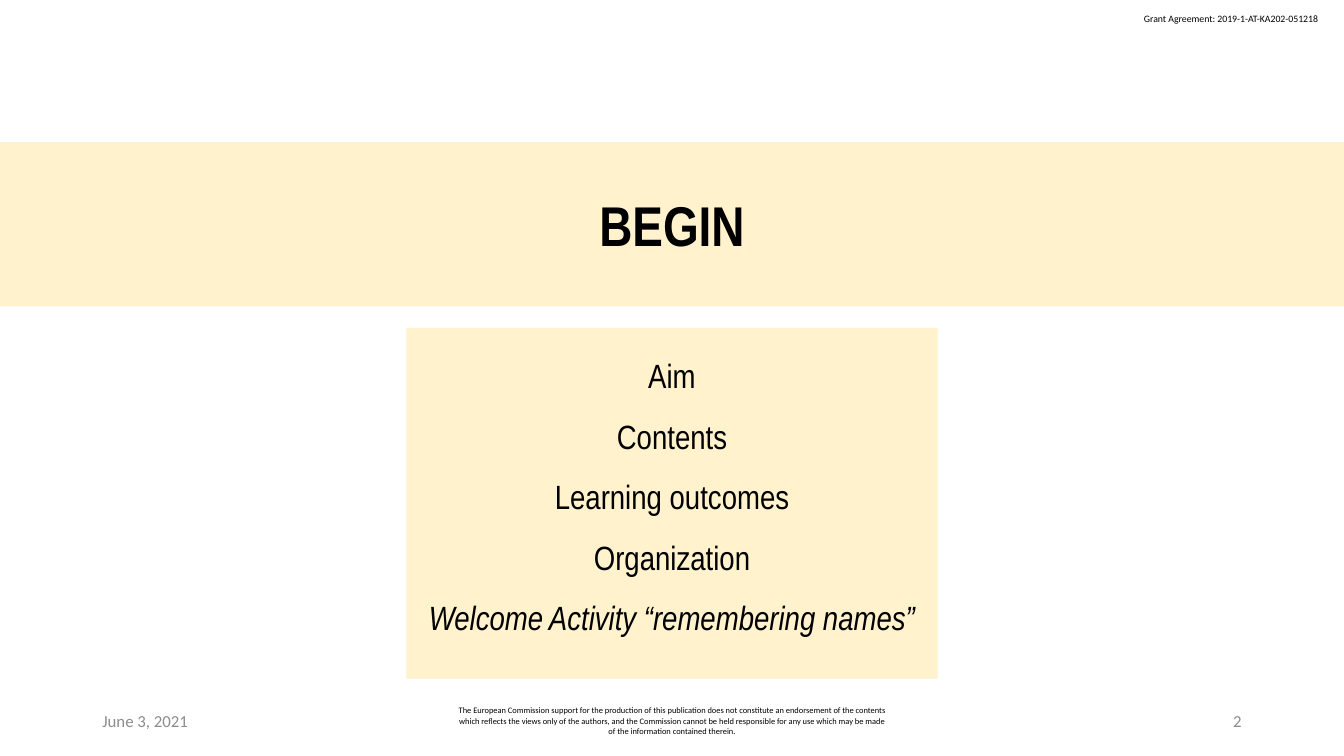
from pptx import Presentation
from pptx.dml.color import RGBColor
from pptx.enum.shapes import MSO_SHAPE
from pptx.enum.text import MSO_ANCHOR, PP_ALIGN
from pptx.util import Cm, Pt

CREAM = RGBColor(0xFF, 0xF2, 0xCC)
BLACK = RGBColor(0x00, 0x00, 0x00)
GREY = RGBColor(0x8C, 0x8C, 0x8C)

PAGE_WIDTH = Cm(33.87)
PAGE_HEIGHT = Cm(19.05)
HEADING_FONT = "Arial Narrow"
SMALL_FONT = "Calibri"

TOPICS = [
    "Aim",
    "Contents",
    "Learning outcomes",
    "Organization",
    "Welcome Activity “remembering names”",
]
DISCLAIMER = (
    "The European Commission support for the production of this publication "
    "does not constitute an endorsement of the contents which reflects the "
    "views only of the authors, and the Commission cannot be held responsible "
    "for any use which may be made of the information contained therein."
)


def style(para, font_name, size, color, align):
    para.alignment = align
    para.font.name = font_name
    para.font.size = Pt(size)
    para.font.color.rgb = color


def add_label(page, left, top, width, height, text, size, color, align, wrap=True):
    box = page.shapes.add_textbox(left, top, width, height)
    frame = box.text_frame
    frame.word_wrap = wrap
    frame.vertical_anchor = MSO_ANCHOR.MIDDLE
    para = frame.paragraphs[0]
    para.text = text
    style(para, SMALL_FONT, size, color, align)


def add_panel(page, left, top, width, height, anchor):
    panel = page.shapes.add_shape(MSO_SHAPE.RECTANGLE, left, top, width, height)
    panel.shadow.inherit = False
    panel.fill.solid()
    panel.fill.fore_color.rgb = CREAM
    panel.line.fill.background()
    frame = panel.text_frame
    frame.word_wrap = True
    frame.vertical_anchor = anchor
    frame.margin_left = frame.margin_right = Cm(0.33)
    frame.margin_top = frame.margin_bottom = Cm(0.18)
    return frame


def add_title_band(page, left, top, width, height):
    frame = add_panel(page, left, top, width, height, MSO_ANCHOR.MIDDLE)
    para = frame.paragraphs[0]
    para.text = "BEGIN"
    style(para, HEADING_FONT, 40, BLACK, PP_ALIGN.CENTER)
    para.font.bold = True


def add_topics(page, left, top, width, height):
    frame = add_panel(page, left, top, width, height, MSO_ANCHOR.TOP)
    frame.text = "\n".join(TOPICS)
    for para in frame.paragraphs:
        style(para, HEADING_FONT, 24, BLACK, PP_ALIGN.CENTER)
        para.line_spacing = 1.5
    frame.paragraphs[-1].font.italic = True


def add_footer(page, left, top, width, height):
    side = Cm(7.62)
    middle = Cm(11.43)
    add_label(page, left, top, side, height,
              "June 3, 2021", 12, GREY, PP_ALIGN.LEFT)
    add_label(page, left + (width - middle) // 2, top, middle, height,
              DISCLAIMER, 6, BLACK, PP_ALIGN.CENTER)
    add_label(page, left + width - side, top, side, height,
              "2", 12, GREY, PP_ALIGN.RIGHT)


def main():
    deck = Presentation()
    deck.slide_width = PAGE_WIDTH
    deck.slide_height = PAGE_HEIGHT
    page = deck.slides.add_slide(deck.slide_layouts[6])
    add_label(page, Cm(28.58), Cm(0.2), Cm(5), Cm(0.56),
              "Grant Agreement: 2019-1-AT-KA202-051218", 7, BLACK,
              PP_ALIGN.LEFT, wrap=False)
    add_footer(page, Cm(2.33), Cm(17.65), Cm(29.21), Cm(1.02))
    add_title_band(page, 0, Cm(3.58), PAGE_WIDTH, Cm(4.14))
    add_topics(page, Cm(10.24), Cm(8.26), Cm(13.39), Cm(8.84))
    deck.save("out.pptx")


if __name__ == "__main__":
    main()
